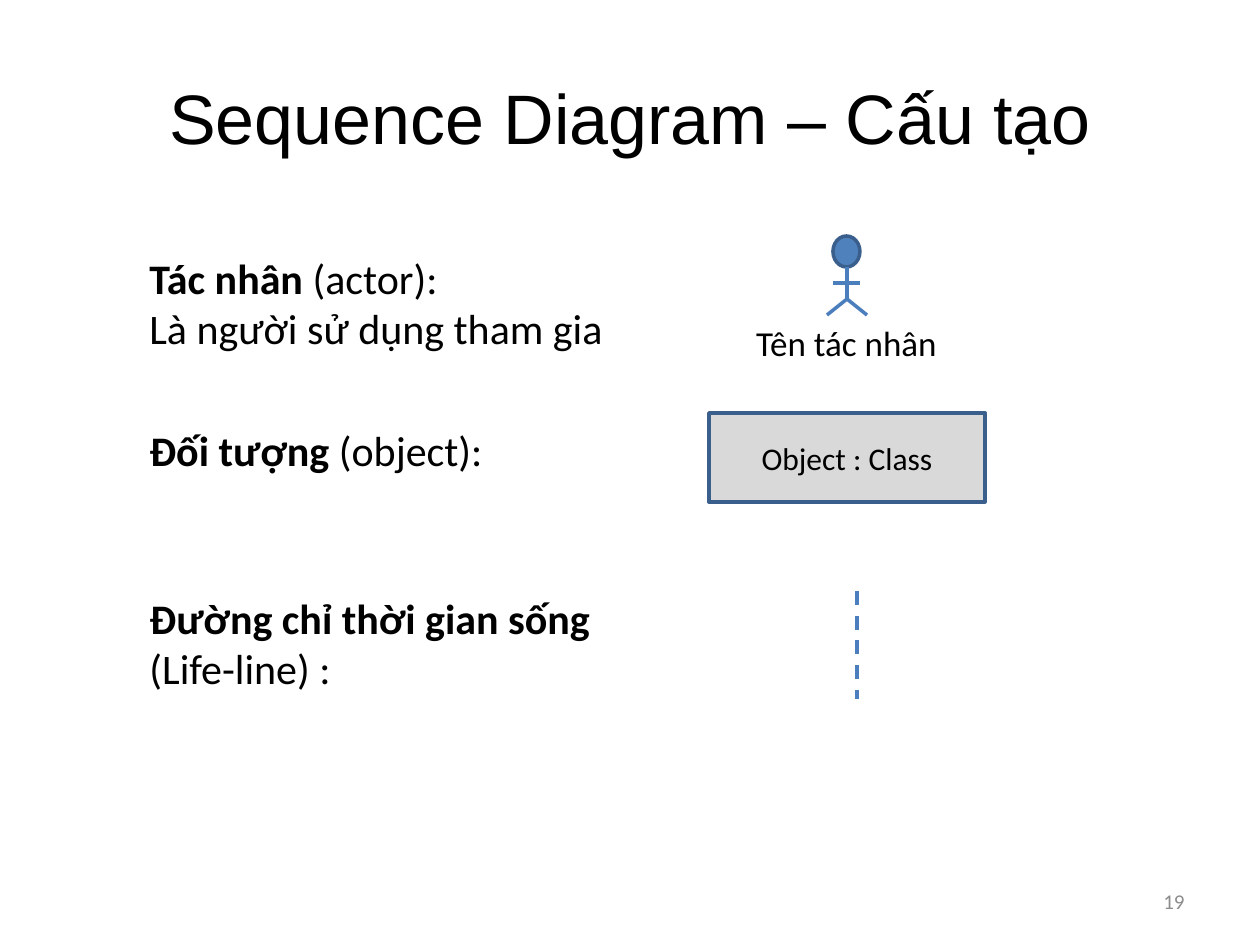
from pptx import Presentation
from pptx import util as u
from pptx.dml.color import RGBColor
from pptx.enum import dml, shapes, text
from pptx.oxml.ns import qn
from lxml import etree

BLACK = RGBColor(0x00, 0x00, 0x00)
GREY = RGBColor(0x8C, 0x8C, 0x8C)
LIGHT_GREY = RGBColor(0xD9, 0xD9, 0xD9)
BLUE = RGBColor(0x4F, 0x81, 0xBD)
LINE_BLUE = RGBColor(0x4B, 0x7E, 0xBC)
DARK_BLUE = RGBColor(0x3A, 0x5F, 0x8C)

LEFT, CENTER, RIGHT = text.PP_ALIGN.LEFT, text.PP_ALIGN.CENTER, text.PP_ALIGN.RIGHT
TOP, MIDDLE = text.MSO_ANCHOR.TOP, text.MSO_ANCHOR.MIDDLE


def px(*values):
    """Turn pixels (126 to the inch) into EMU."""
    return [u.Emu(round(v * 914400 / 126)) for v in values]


def write(sp, paragraphs, size, font="Calibri", color=BLACK, align=LEFT, anchor=TOP):
    """Fill a shape; each paragraph is a list of (words, bold) runs."""
    tf = sp.text_frame
    tf.word_wrap = True
    tf.vertical_anchor = anchor
    for i, runs in enumerate(paragraphs):
        p = tf.paragraphs[0] if i == 0 else tf.add_paragraph()
        p.alignment = align
        for words, bold in runs:
            r = p.add_run()
            r.text = words
            r.font.name, r.font.size, r.font.bold = font, u.Pt(size), bold
            r.font.color.rgb = color


prs = Presentation()
prs.slide_width, prs.slide_height = px(1260, 945)
slide = prs.slides.add_slide(prs.slide_layouts[5])

# Title
title = slide.shapes.title
title.left, title.top, title.width, title.height = px(63, 38, 1134, 157)
write(title, [[("Sequence Diagram – Cấu tạo", False)]], 40, font="Arial",
      align=CENTER, anchor=MIDDLE)

# Descriptions, actor caption and page number
labels = [
    ((137, 246, 532, 115), 24, BLACK, LEFT, TOP,
     [[("Tác nhân ", True), ("(actor):", False)],
      [("Là người sử dụng tham gia", False)]]),
    ((137, 418, 403, 63), 24, BLACK, LEFT, TOP,
     [[("Đối tượng ", True), ("(object):", False)]]),
    ((137, 586, 561, 115), 24, BLACK, LEFT, TOP,
     [[("Đường chỉ thời gian sống", True)], [("(Life-line) :", False)]]),
    ((728, 315, 237, 55), 20, BLACK, CENTER, TOP, [[("Tên tác nhân", False)]]),
    ((903, 876, 294, 50), 12, GREY, RIGHT, MIDDLE, [[("19", False)]]),
]
for box, size, color, align, anchor, paragraphs in labels:
    sp = slide.shapes.add_textbox(*px(*box))
    write(sp, paragraphs, size, color=color, align=align, anchor=anchor)

# Actor head and object box
actor = slide.shapes.add_group_shape()
head = actor.shapes.add_shape(shapes.MSO_SHAPE.OVAL, *px(833, 236, 27, 31))
obj = slide.shapes.add_shape(shapes.MSO_SHAPE.RECTANGLE, *px(709, 413, 276, 89))
for sp, fill in ((head, BLUE), (obj, LIGHT_GREY)):
    sp.shadow.inherit = False
    sp.fill.solid()
    sp.fill.fore_color.rgb = fill
    sp.line.color.rgb = DARK_BLUE
    sp.line.width = u.Pt(2)
write(obj, [[("Object : Class", False)]], 18, align=CENTER, anchor=MIDDLE)

# Actor body, legs and arms, then the dashed life-line
strokes = [
    (actor, (847, 267, 847, 299), None),
    (actor, (847, 299, 867, 315), None),
    (actor, (827, 315, 847, 299), None),
    (actor, (860, 283, 833, 283), None),
    (slide, (857, 591, 857, 699), dml.MSO_LINE.DASH),
]
for parent, ends, dash in strokes:
    line = parent.shapes.add_connector(shapes.MSO_CONNECTOR.STRAIGHT, *px(*ends))
    line.line.color.rgb = LINE_BLUE
    line.line.width = u.Pt(2)
    if dash:
        line.line.dash_style = dash
    etree.SubElement(line._element.spPr, qn("a:effectLst"))

prs.save("out.pptx")
